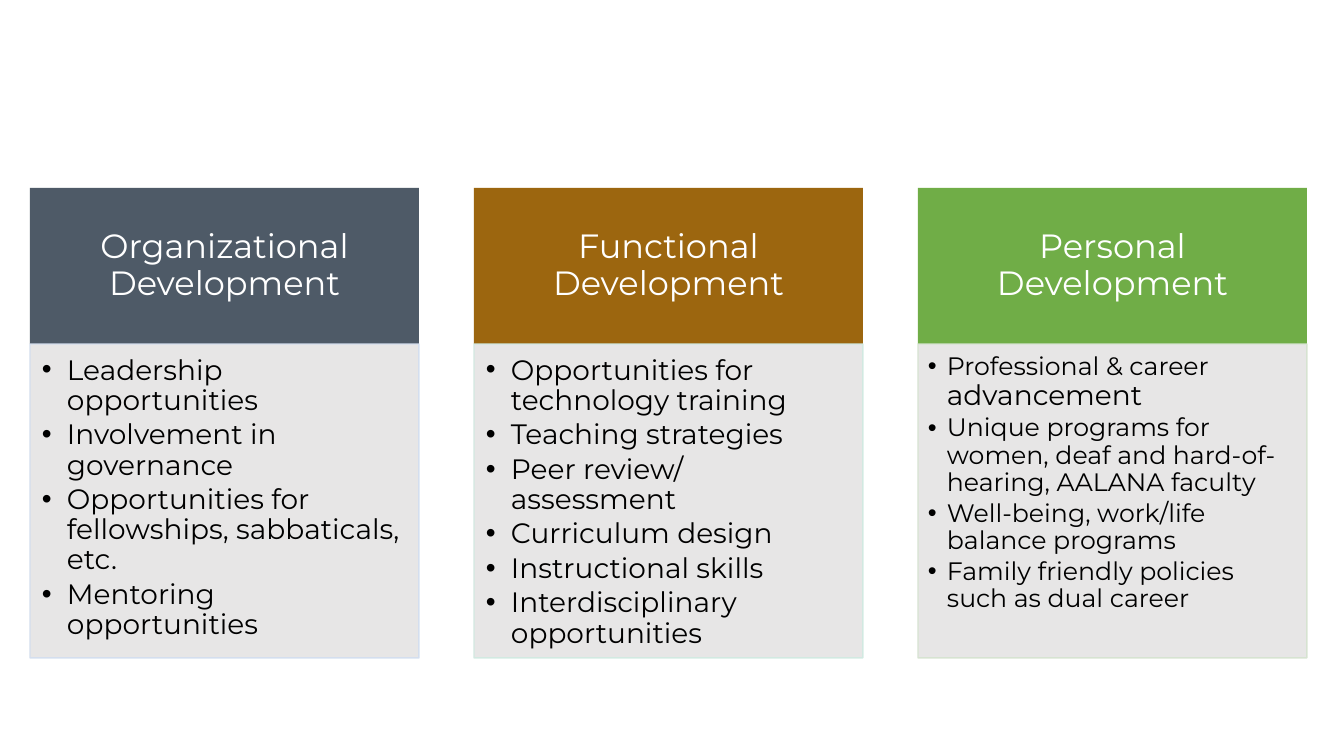
from lxml.etree import SubElement
from pptx import Presentation
from pptx.dml.color import RGBColor
from pptx.enum.shapes import MSO_SHAPE as Shape
from pptx.enum.text import MSO_ANCHOR as Anchor, PP_ALIGN as Align
from pptx.oxml.ns import qn
from pptx.util import Emu, Pt

SLIDE_W, SLIDE_H = 1344, 756
EMU_PER_PX = 12192000 / SLIDE_W


def px(length):
    return Emu(round(length * EMU_PER_PX))


def colour(hex_code):
    return RGBColor.from_string(hex_code)


class Board:
    """Holds the style and the current slide."""
    font = "Montserrat"
    panel_fill = "E7E6E6"
    heading_size = 24
    line_spacing = 0.9

    def __init__(self, slide):
        self.slide = slide

    def box(self, left, top, width, height, fill, insets, anchor):
        box = self.slide.shapes.add_shape(
            Shape.RECTANGLE, px(left), px(top), px(width), px(height))
        box.shadow.inherit = False
        box.fill.solid()
        box.fill.fore_color.rgb = colour(fill)
        box.line.fill.background()
        frame = box.text_frame
        frame.word_wrap = True
        frame.vertical_anchor = anchor
        (frame.margin_left, frame.margin_top,
         frame.margin_right, frame.margin_bottom) = map(px, insets)
        return box

    def style(self, paragraph, size, ink, align):
        paragraph.alignment = align
        paragraph.line_spacing = self.line_spacing
        paragraph.font.name = self.font
        paragraph.font.size = Pt(size)
        paragraph.font.color.rgb = colour(ink)

    def heading(self, left, top, width, height, title, fill):
        box = self.box(left, top, width, height, fill,
                       (19, 11, 19, 11), Anchor.MIDDLE)
        paragraph = box.text_frame.paragraphs[0]
        paragraph.text = title
        self.style(paragraph, self.heading_size, "FFFFFF", Align.CENTER)

    def panel(self, left, top, width, height, bullets, edge, size, indent, insets):
        box = self.box(left, top, width, height, self.panel_fill, insets, Anchor.TOP)
        box.line.color.rgb = colour(edge)
        box.line.width = Pt(1)
        edge_colour = box.line._get_or_add_ln().find(".//" + qn("a:srgbClr"))
        SubElement(edge_colour, qn("a:alpha"), val="90000")
        frame = box.text_frame
        for index, runs in enumerate(bullets):
            paragraph = frame.add_paragraph() if index else frame.paragraphs[0]
            self.bullet(paragraph, runs, size, indent)

    def bullet(self, paragraph, runs, size, indent):
        paragraph.level = 1
        paragraph.space_after = Pt(0.15 * size)
        props = paragraph._p.get_or_add_pPr()
        props.set("marL", str(px(indent)))
        props.set("indent", str(-px(indent)))
        SubElement(props, qn("a:buFont"), typeface="Arial")
        SubElement(props, qn("a:buChar"), char="•")
        self.style(paragraph, size, "000000", Align.LEFT)
        for text, run_size in runs:
            run = paragraph.add_run()
            run.text = text
            if run_size != size:
                run.font.size = Pt(run_size)


def plain(size, *texts):
    """Bullets of one run each, all of the same size."""
    return [[(text, size)] for text in texts]


# Column content: title, heading fill, panel edge, text size, indent, insets, bullets
WIDE, TIGHT = (12, 12, 16, 17), (10, 10, 14, 16)
COLUMNS = [
    ("Organizational Development", "4E5A67", "D2DEEF", 20, 25, WIDE, plain(
        20,
        "Leadership opportunities",
        "Involvement in governance",
        "Opportunities for fellowships, sabbaticals, etc.",
        "Mentoring opportunities")),
    ("Functional Development", "9C660F", "D0EAE1", 20, 25, WIDE, plain(
        20,
        "Opportunities for technology training",
        "Teaching strategies",
        "Peer review/ assessment",
        "Curriculum design",
        "Instructional skills",
        "Interdisciplinary opportunities")),
    ("Personal Development", "70AD47", "D5E3CF", 18, 19, TIGHT, [
        [("Professional & career ", 18), ("advancement", 20)],
        *plain(
            18,
            "Unique programs for women, deaf and hard-of-hearing, AALANA faculty",
            "Well-being, work/life balance programs",
            "Family friendly policies such as dual career")]),
]
FIRST_LEFT, PITCH, COLUMN_W = 30, 444, 389
HEADING_TOP, HEADING_H, PANEL_H = 188, 156, 314


def main():
    deck = Presentation()
    deck.slide_width, deck.slide_height = px(SLIDE_W), px(SLIDE_H)
    board = Board(deck.slides.add_slide(deck.slide_layouts[6]))

    # Three columns, each a heading above a bulleted panel
    for index, (title, fill, edge, size, indent, insets, bullets) in enumerate(COLUMNS):
        left = FIRST_LEFT + index * PITCH
        board.heading(left, HEADING_TOP, COLUMN_W, HEADING_H, title, fill)
        board.panel(left, HEADING_TOP + HEADING_H, COLUMN_W, PANEL_H,
                    bullets, edge, size, indent, insets)

    deck.save("out.pptx")


if __name__ == "__main__":
    main()
